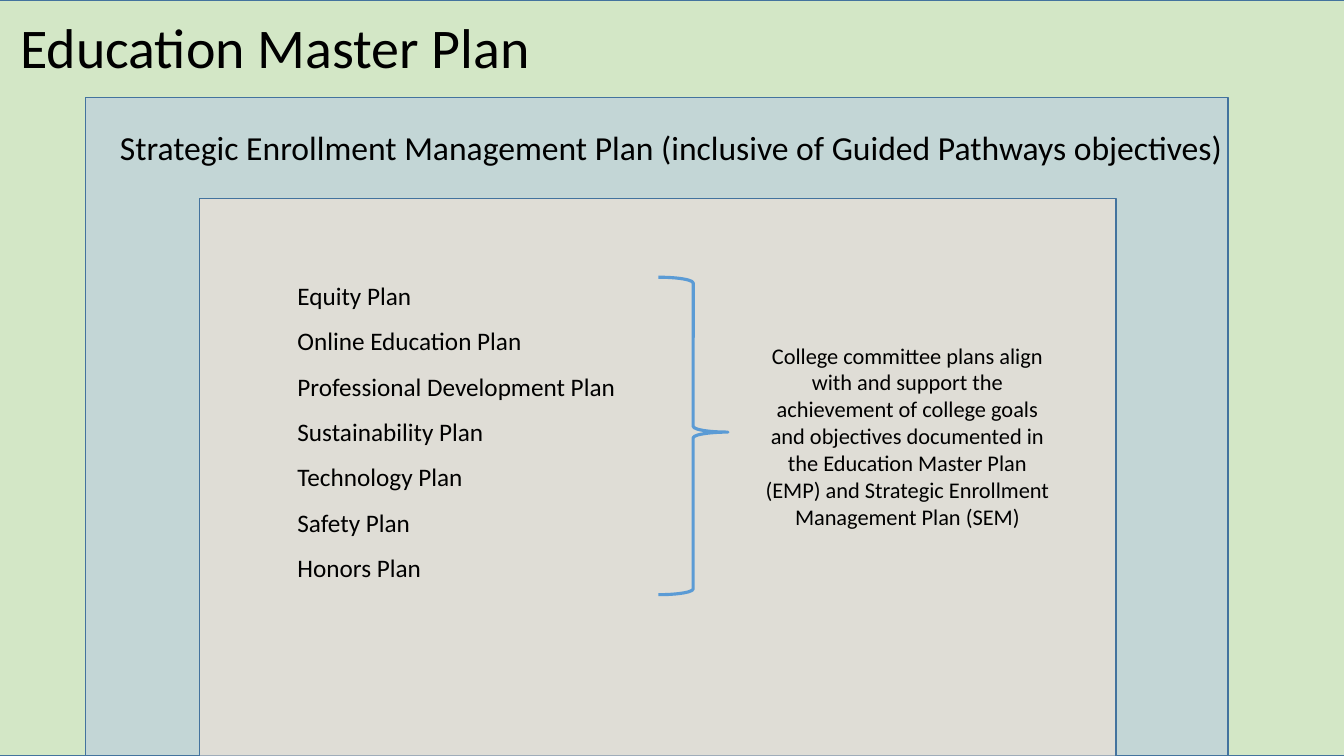
from dataclasses import dataclass

from lxml import etree
from pptx import Presentation
from pptx import util as u
from pptx.dml import color
from pptx.enum import shapes, text
from pptx.oxml import ns


@dataclass(frozen=True)
class Theme:
    font: str = "Calibri"
    ink: str = "000000"
    outline: str = "43739E"
    brace: str = "5B9BD5"
    education: str = "A9D18E"
    enrollment: str = "B4C7E7"
    committees: str = "FBE5D6"
    panel_opacity: int = 50
    title_size: int = 40
    subtitle_size: int = 24
    list_size: int = 18
    note_size: int = 16


@dataclass(frozen=True)
class Box:
    left: float
    top: float
    width: float
    height: float

    def lengths(self) -> list:
        return [u.Inches(n) for n in (self.left, self.top, self.width, self.height)]


@dataclass(frozen=True)
class Panel:
    box: Box
    fill: str


THEME = Theme()

PANELS = [
    Panel(Box(-0.04, 0, 13.38, 7.5), THEME.education),
    Panel(Box(0.85, 0.97, 11.33, 6.53), THEME.enrollment),
    Panel(Box(1.98, 1.97, 9.09, 5.54), THEME.committees),
]

COMMITTEE_PLANS = [
    "Equity Plan",
    "Online Education Plan",
    "Professional Development Plan",
    "Sustainability Plan",
    "Technology Plan",
    "Safety Plan",
    "Honors Plan",
]


def draw_panel(slide, panel: Panel) -> None:
    """Draw one translucent nested plan area."""
    shape = slide.shapes.add_shape(shapes.MSO_SHAPE.RECTANGLE, *panel.box.lengths())
    shape.shadow.inherit = False
    shape.fill.solid()
    shape.fill.fore_color.rgb = color.RGBColor.from_string(panel.fill)
    fill_color = shape.element.spPr.find(".//" + ns.qn("a:srgbClr"))
    alpha = etree.SubElement(fill_color, ns.qn("a:alpha"))
    alpha.set("val", str(THEME.panel_opacity * 1000))
    shape.line.color.rgb = color.RGBColor.from_string(THEME.outline)
    shape.line.width = u.Pt(1)


def draw_brace(slide, box: Box) -> None:
    """Draw the brace that joins the plans to the note."""
    brace = slide.shapes.add_shape(shapes.MSO_SHAPE.RIGHT_BRACE, *box.lengths())
    brace.shadow.inherit = False
    brace.adjustments[0] = 0.083
    brace.adjustments[1] = 0.488
    brace.fill.background()
    brace.line.color.rgb = color.RGBColor.from_string(THEME.brace)
    brace.line.width = u.Pt(2.25)


def write(shape, lines: list[str], *, size: int, align=text.PP_ALIGN.LEFT,
          spacing: float = 1.0, wrap: bool = True) -> None:
    """Fill a shape with plain, unbulleted paragraphs."""
    frame = shape.text_frame
    frame.text = "\n".join(lines)
    frame.word_wrap = wrap
    frame.auto_size = text.MSO_AUTO_SIZE.NONE
    frame.vertical_anchor = text.MSO_ANCHOR.TOP
    for paragraph in frame.paragraphs:
        paragraph.alignment = align
        paragraph.line_spacing = spacing
        paragraph.space_before = u.Pt(0)
        paragraph.font.size = u.Pt(size)
        paragraph.font.name = THEME.font
        paragraph.font.color.rgb = color.RGBColor.from_string(THEME.ink)
        properties = paragraph._p.get_or_add_pPr()
        properties.set("marL", "0")
        properties.set("indent", "0")
        properties.insert_element_before(
            etree.Element(ns.qn("a:buNone")), "a:tabLst", "a:defRPr", "a:extLst")


def place_in_front(shape, box: Box):
    """Move a placeholder to its box, above the panels."""
    shape.left, shape.top, shape.width, shape.height = box.lengths()
    shape.element.getparent().append(shape.element)
    return shape


def main() -> None:
    presentation = Presentation()
    presentation.slide_width = u.Inches(13.33)
    presentation.slide_height = u.Inches(7.5)
    slide = presentation.slides.add_slide(presentation.slide_layouts[1])

    # Nested plan areas
    for panel in PANELS:
        draw_panel(slide, panel)

    # Headings
    title = place_in_front(slide.shapes.title, Box(0.1, 0.07, 5.31, 0.77))
    write(title, ["Education Master Plan"], size=THEME.title_size, wrap=False)
    subtitle = slide.shapes.add_textbox(*Box(1.09, 1.21, 11.29, 0.5).lengths())
    write(subtitle,
          ["Strategic Enrollment Management Plan (inclusive of Guided Pathways objectives)"],
          size=THEME.subtitle_size)

    # Committee plans
    body = place_in_front(slide.placeholders[1], Box(2.85, 2.58, 4.57, 3.58))
    write(body, COMMITTEE_PLANS, size=THEME.list_size, spacing=1.5)

    # Alignment note
    note = slide.shapes.add_textbox(*Box(7.42, 3.34, 3.16, 1.99).lengths())
    write(note,
          ["College committee plans align with and support the achievement of college "
           "goals and objectives documented in the Education Master Plan (EMP) and "
           "Strategic Enrollment Management Plan (SEM)"],
          size=THEME.note_size, align=text.PP_ALIGN.CENTER)
    draw_brace(slide, Box(6.53, 2.75, 0.69, 3.15))

    presentation.save("out.pptx")


if __name__ == "__main__":
    main()
